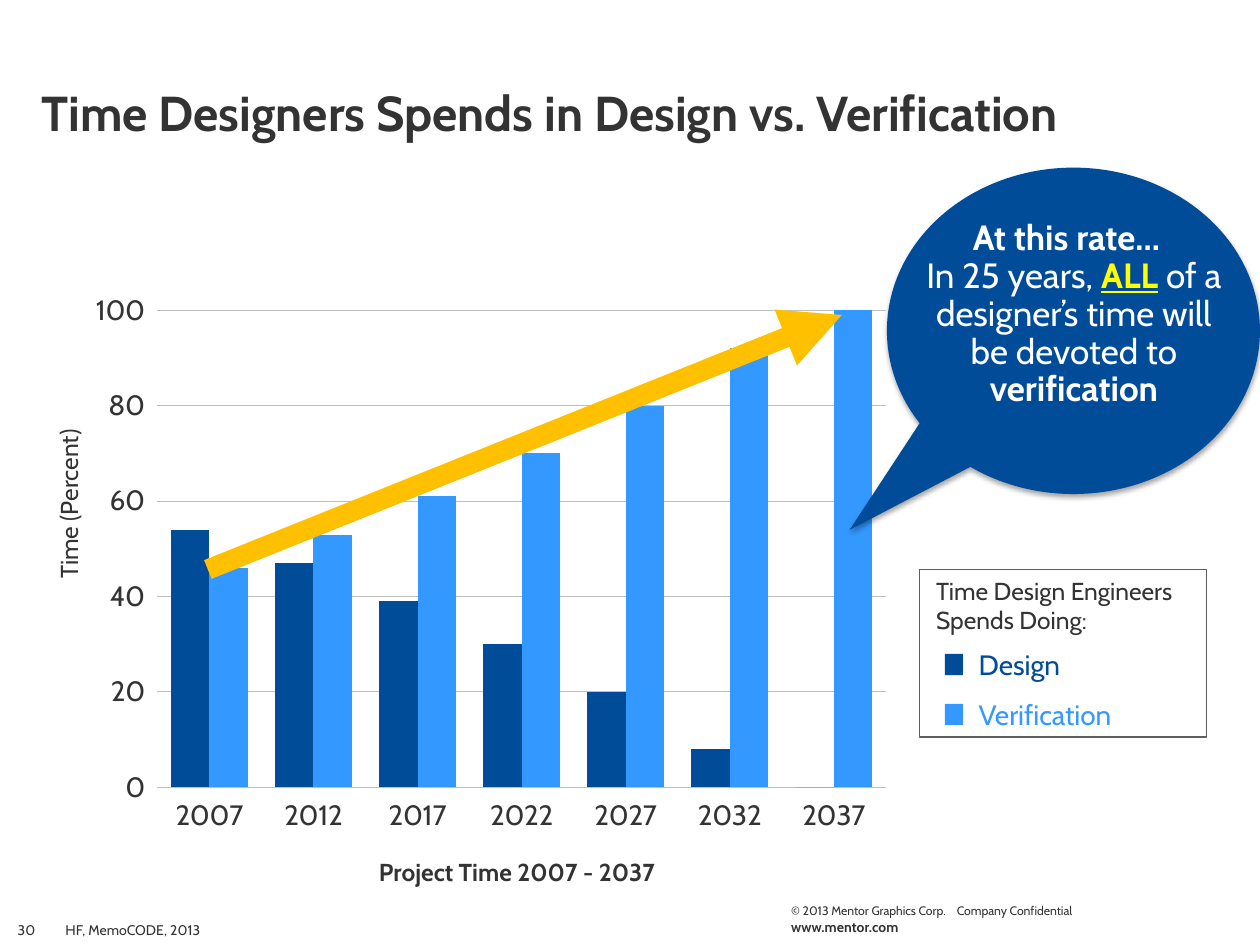
import typing

import lxml.etree
import pptx
import pptx.chart.data
import pptx.dml.color
import pptx.enum.chart
import pptx.enum.shapes
import pptx.enum.text
import pptx.oxml
import pptx.oxml.ns
import pptx.util

Cm = pptx.util.Cm
Pt = pptx.util.Pt
qn = pptx.oxml.ns.qn
Align = pptx.enum.text.PP_ALIGN
Anchor = pptx.enum.text.MSO_ANCHOR
Preset = pptx.enum.shapes.MSO_SHAPE

FONT = "Cabin"
INK = "333333"
DESIGN = "004C99"
VERIFICATION = "3398FF"


class Box(typing.NamedTuple):
    """A rectangle in centimetres."""
    left: float
    top: float
    width: float
    height: float

    def inner(self, left, top, width, height):
        """Return a box placed relative to this one."""
        return Box(self.left + left, self.top + top, width, height)

    def lengths(self):
        """Return the four sides as lengths."""
        return [Cm(side) for side in self]


def rgb(value):
    """Turn a hex string into a colour."""
    return pptx.dml.color.RGBColor.from_string(value)


def set_font(font, size, colour=INK, bold=False):
    """Set the face, size, colour and weight of a font."""
    font.name, font.size, font.bold = FONT, Pt(size), bold
    font.color.rgb = rgb(colour)


def add_text(page, box, text, size, colour=INK, bold=False,
             align=Align.LEFT, anchor=Anchor.TOP):
    """Add a wrapped text box with one paragraph."""
    shape = page.shapes.add_textbox(*box.lengths())
    frame = shape.text_frame
    frame.word_wrap = True
    frame.vertical_anchor = anchor
    frame.text = text
    para = frame.paragraphs[0]
    para.alignment = align
    set_font(para.runs[0].font, size, colour, bold)
    return shape


def add_block(page, box, preset, fill, outline=None):
    """Add a flat filled shape with an optional thin outline."""
    shape = page.shapes.add_shape(preset, *box.lengths())
    shape.shadow.inherit = False
    shape.fill.solid()
    shape.fill.fore_color.rgb = rgb(fill)
    if outline:
        shape.line.color.rgb = rgb(outline)
        shape.line.width = Pt(0.75)
    else:
        shape.line.fill.background()
    return shape


def fill_title(page, box):
    """Move and format the title placeholder."""
    title = page.shapes.title
    title.left, title.top, title.width, title.height = box.lengths()
    frame = title.text_frame
    frame.text = "Time Designers Spends in Design vs. Verification"
    frame.auto_size = pptx.enum.text.MSO_AUTO_SIZE.NONE
    frame.vertical_anchor = Anchor.BOTTOM
    frame.margin_left = frame.margin_right = Cm(1.27)
    para = frame.paragraphs[0]
    para.alignment = Align.LEFT
    set_font(para.runs[0].font, 28, bold=True)


def place_plot(chart, fractions):
    """Fix the inner plot area as fractions of the chart."""
    area = chart.element.find(".//" + qn("c:plotArea"))
    for old in area.findall(qn("c:layout")):
        area.remove(old)
    layout = lxml.etree.Element(qn("c:layout"))
    manual = lxml.etree.SubElement(layout, qn("c:manualLayout"))
    settings = [("layoutTarget", "inner"), ("xMode", "edge"), ("yMode", "edge")]
    for name, value in settings + list(zip("xywh", fractions)):
        lxml.etree.SubElement(manual, qn("c:" + name), val=str(value))
    area.insert(0, layout)


def add_time_chart(page, box):
    """Add the column chart with its axis captions and trend arrow."""
    data = pptx.chart.data.CategoryChartData()
    data.categories = [str(year) for year in range(2007, 2038, 5)]
    data.add_series("Series 1", (54, 47, 39, 30, 20, 8, 0))
    data.add_series("Series 2", (46, 53, 61, 70, 80, 92, 100))
    kind = pptx.enum.chart.XL_CHART_TYPE.COLUMN_CLUSTERED
    chart = page.shapes.add_chart(kind, *box.lengths(), data).chart
    chart.has_legend = chart.has_title = False
    set_font(chart.font, 18)
    place_plot(chart, (0.149, 0.088, 0.749, 0.72))

    plot = chart.plots[0]
    plot.gap_width, plot.overlap, plot.vary_by_categories = 71, 0, False
    for series, colour in zip(plot.series, (DESIGN, VERIFICATION)):
        series.format.fill.solid()
        series.format.fill.fore_color.rgb = rgb(colour)
    for axis in (chart.category_axis, chart.value_axis):
        set_font(axis.tick_labels.font, 16)
        axis.format.line.fill.background()
    values = chart.value_axis
    values.minimum_scale, values.maximum_scale, values.major_unit = 0, 100, 20
    values.major_gridlines.format.line.color.rgb = rgb("BFBFBF")
    values.major_gridlines.format.line.width = Pt(0.5)

    add_text(page, box.inner(2.72, 12.07, 14.91, 0.86), "Project Time 2007 - 2037",
             14, bold=True, align=Align.CENTER)
    caption = add_text(page, box.inner(-3.93, 4.65, 10.13, 0.86), "Time (Percent)",
                       14, align=Align.CENTER)
    caption.rotation = 270
    start, end = box.inner(3.94, 6.4, 0, 0), box.inner(16.72, 1.27, 0, 0)
    add_trend_arrow(page, start, end)


def add_trend_arrow(page, start, end):
    """Add the thick arrow between two points."""
    straight = pptx.enum.shapes.MSO_CONNECTOR.STRAIGHT
    arrow = page.shapes.add_connector(
        straight, *start.lengths()[:2], *end.lengths()[:2])
    arrow.line.color.rgb = rgb("FFC000")
    arrow.line.width = Pt(11.5)
    outline = arrow.line._get_or_add_ln()
    lxml.etree.SubElement(outline, qn("a:tailEnd"), type="triangle")
    lxml.etree.SubElement(arrow._element.spPr, qn("a:effectLst"))


def add_callout(page, box):
    """Add the speech bubble and its message."""
    bubble = add_block(page, box, Preset.OVAL_CALLOUT, DESIGN)
    bubble.adjustments[0], bubble.adjustments[1] = -0.6, 0.61
    effects = bubble._element.spPr.find(qn("a:effectLst"))
    shadow = lxml.etree.SubElement(
        effects, qn("a:outerShdw"), blurRad=str(Pt(3.1)), dist=str(Pt(1.8)),
        dir="5400000", algn="t", rotWithShape="0")
    black = lxml.etree.SubElement(shadow, qn("a:srgbClr"), val="000000")
    lxml.etree.SubElement(black, qn("a:alpha"), val="35000")

    label = add_text(page, box.inner(-0.81, 0.94, 8.86, 5.38), "At this rate…", 20,
                     "FFFFFF", True, Align.CENTER)
    frame = label.text_frame
    frame.margin_left = frame.margin_right = Cm(1.27)
    para = frame.add_paragraph()
    para.level = 1
    para.alignment = Align.CENTER
    para._p.get_or_add_pPr().set("marL", str(Cm(0.3)))
    para._p.get_or_add_pPr().set("indent", "0")
    for text, colour, strong in (
            ("In 25 years, ", "FFFFFF", False),
            ("ALL", "FFFF00", True),
            (" of a designer’s time will be devoted to ", "FFFFFF", False),
            ("verification", "FFFFFF", True)):
        span = para.add_run()
        span.text = text
        set_font(span.font, 20, colour, strong)
        span.font.underline = text == "ALL"
    for para in frame.paragraphs:
        para.line_spacing = 0.9


def add_legend(page, box):
    """Add the framed legend with one row per activity."""
    add_block(page, box, Preset.RECTANGLE, "FFFFFF", "5F5F5F")
    add_text(page, box.inner(0.08, 0, 5.71, 1.45),
             "Time Design Engineers Spends Doing:", 14)
    entries = (("Design", DESIGN), ("Verification", VERIFICATION))
    for row, (name, colour) in enumerate(entries):
        top = 1.45 + 1.01 * row
        add_block(page, box.inner(0.51, top + 0.25, 0.36, 0.43),
                  Preset.RECTANGLE, colour)
        add_text(page, box.inner(0.94, top, 4.88, 0.94), name, 16, colour)


def add_footer(page, box):
    """Add the page number, source, copyright and address."""
    add_text(page, box.inner(0, 0.33, 1.07, 0.64), "30", 8,
             align=Align.CENTER, anchor=Anchor.BOTTOM)
    add_text(page, box.inner(1.07, 0.33, 14.48, 0.64), "HF, MemoCODE, 2013", 8,
             anchor=Anchor.BOTTOM)
    add_text(page, box.inner(15.7, 0, 6.73, 0.56),
             "© 2013 Mentor Graphics Corp.    Company Confidential", 7)
    add_text(page, box.inner(15.7, 0.31, 4.01, 0.58), "www.mentor.com", 8, bold=True)


def main():
    """Build the slide and save it."""
    deck = pptx.Presentation()
    deck.slide_width, deck.slide_height = Cm(25.4), Cm(19.05)
    page = deck.slides.add_slide(deck.slide_layouts[5])
    fill_title(page, Box(-0.43, 0, 27.74, 2.97))
    add_time_chart(page, Box(0.25, 5.08, 19.61, 13.36))
    add_callout(page, Box(17.88, 3.38, 7.52, 6.58))
    add_legend(page, Box(18.54, 11.48, 5.79, 3.38))
    add_footer(page, Box(0, 18.08, 25.4, 0.97))
    deck.save("out.pptx")


if __name__ == "__main__":
    main()
